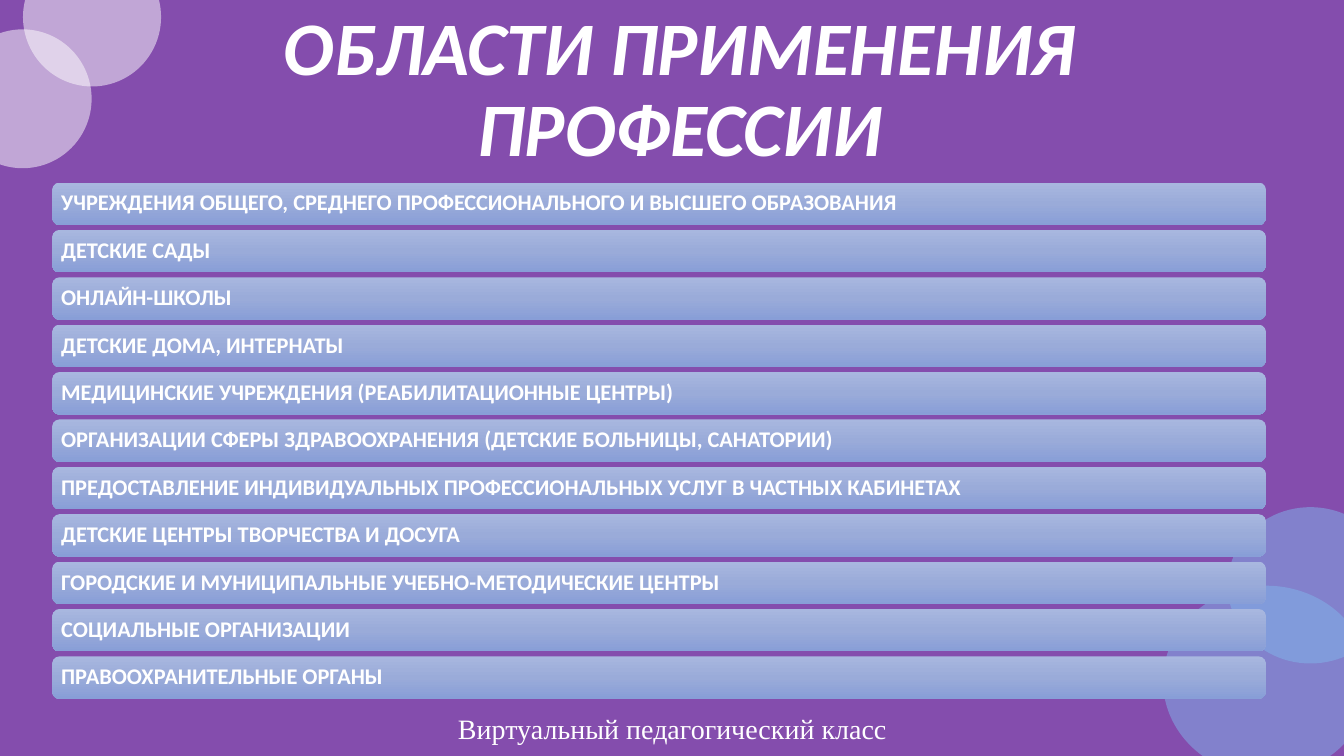
from copy import deepcopy
from dataclasses import dataclass

from lxml import etree
from pptx import Presentation
from pptx import util as u
from pptx.dml.color import RGBColor
from pptx.enum import shapes, text
from pptx.oxml import ns

WHITE = "FFFFFF"
SKY = "81B6EB"
BACKDROP = "844DAD"
BAR_GRADIENT = ((0, "A8B7DF"), (0.5, "9AABD9"), (1, "889ED7"))

BAR_LEFT, BAR_WIDTH, BAR_HEIGHT = 1.32, 30.58, 1.07
FIRST_TOP, LAST_TOP = 4.6, 16.54

FIELDS = (
    "УЧРЕЖДЕНИЯ ОБЩЕГО, СРЕДНЕГО ПРОФЕССИОНАЛЬНОГО И ВЫСШЕГО ОБРАЗОВАНИЯ",
    "ДЕТСКИЕ САДЫ",
    "ОНЛАЙН-ШКОЛЫ",
    "ДЕТСКИЕ ДОМА, ИНТЕРНАТЫ",
    "МЕДИЦИНСКИЕ УЧРЕЖДЕНИЯ (РЕАБИЛИТАЦИОННЫЕ ЦЕНТРЫ)",
    "ОРГАНИЗАЦИИ СФЕРЫ ЗДРАВООХРАНЕНИЯ (ДЕТСКИЕ БОЛЬНИЦЫ, САНАТОРИИ)",
    "ПРЕДОСТАВЛЕНИЕ ИНДИВИДУАЛЬНЫХ ПРОФЕССИОНАЛЬНЫХ УСЛУГ В ЧАСТНЫХ КАБИНЕТАХ",
    "ДЕТСКИЕ ЦЕНТРЫ ТВОРЧЕСТВА И ДОСУГА",
    "ГОРОДСКИЕ И МУНИЦИПАЛЬНЫЕ УЧЕБНО-МЕТОДИЧЕСКИЕ ЦЕНТРЫ",
    "СОЦИАЛЬНЫЕ ОРГАНИЗАЦИИ",
    "ПРАВООХРАНИТЕЛЬНЫЕ ОРГАНЫ",
)


@dataclass(frozen=True)
class Bubble:
    left: float
    top: float
    width: float
    height: float
    color: str


@dataclass(frozen=True)
class Bar:
    top: float
    label: str


BUBBLES = (
    Bubble(29.31, 14.76, 5.21, 4.8, SKY),
    Bubble(-1.17, 0.74, 3.48, 3.5, WHITE),
    Bubble(0.58, -1.32, 3.48, 3.5, WHITE),
    Bubble(30.94, 12.78, 4.17, 3.94, SKY),
)
PITCH = (LAST_TOP - FIRST_TOP) / (len(FIELDS) - 1)
BARS = [Bar(FIRST_TOP + i * PITCH, label) for i, label in enumerate(FIELDS)]


def paint(color_format, color: str) -> None:
    color_format.rgb = RGBColor.from_string(color)


def write(frame, words: str, font: str, size: float, align,
          bold: bool = False, italic: bool = False) -> None:
    frame.word_wrap = True
    frame.auto_size = text.MSO_AUTO_SIZE.NONE
    frame.vertical_anchor = text.MSO_ANCHOR.MIDDLE
    frame.text = words
    paragraph = frame.paragraphs[0]
    paragraph.alignment = align
    paragraph.font.name = font
    paragraph.font.size = u.Pt(size)
    paragraph.font.bold = bold
    paragraph.font.italic = italic
    paint(paragraph.font.color, WHITE)


def draw_title(slide) -> None:
    title = slide.shapes.title
    title.left, title.top = u.Cm(2.34), u.Cm(1.02)
    title.width, title.height = u.Cm(29.57), u.Cm(4.62)
    write(title.text_frame, "ОБЛАСТИ ПРИМЕНЕНИЯ ПРОФЕССИИ", "Calibri", 54,
          text.PP_ALIGN.CENTER, bold=True, italic=True)
    title.text_frame.margin_bottom = u.Cm(2.18)
    title.text_frame.paragraphs[0].line_spacing = 0.9


def draw_bubble(slide, bubble: Bubble) -> None:
    circle = slide.shapes.add_shape(
        shapes.MSO_SHAPE.OVAL, u.Cm(bubble.left), u.Cm(bubble.top),
        u.Cm(bubble.width), u.Cm(bubble.height))
    circle.shadow.inherit = False
    circle.line.fill.background()
    circle.fill.solid()
    paint(circle.fill.fore_color, bubble.color)
    tint = next(circle._element.spPr.iter(ns.qn("a:srgbClr")))
    etree.SubElement(tint, ns.qn("a:alpha"), val="50000")


def draw_bar(slide, bar: Bar) -> None:
    strip = slide.shapes.add_shape(
        shapes.MSO_SHAPE.ROUNDED_RECTANGLE, u.Cm(BAR_LEFT), u.Cm(bar.top),
        u.Cm(BAR_WIDTH), u.Cm(BAR_HEIGHT))
    strip.shadow.inherit = False
    strip.line.fill.background()
    strip.fill.gradient()
    strip.fill.gradient_angle = 270
    first_stop = next(strip._element.spPr.iter(ns.qn("a:gs")))
    first_stop.addnext(deepcopy(first_stop))
    for stop, (position, color) in zip(strip.fill.gradient_stops, BAR_GRADIENT):
        stop.position = position
        paint(stop.color, color)
    frame = strip.text_frame
    write(frame, bar.label, "Calibri", 16, text.PP_ALIGN.LEFT, bold=True)
    frame.paragraphs[0].line_spacing = 0.9
    frame.margin_left = frame.margin_right = u.Cm(0.17)
    frame.margin_top = frame.margin_bottom = u.Cm(0.17)


def draw_footer(slide) -> None:
    footer = slide.shapes.add_textbox(
        u.Cm(10.39), u.Cm(17.96), u.Cm(13.11), u.Cm(0.79))
    write(footer.text_frame, "Виртуальный педагогический класс",
          "Times New Roman", 20, text.PP_ALIGN.CENTER)


def main() -> None:
    deck = Presentation()
    deck.slide_width, deck.slide_height = u.Cm(33.87), u.Cm(19.05)
    slide = deck.slides.add_slide(deck.slide_layouts[5])
    slide.background.fill.solid()
    paint(slide.background.fill.fore_color, BACKDROP)
    draw_title(slide)
    for bubble in BUBBLES:
        draw_bubble(slide, bubble)
    draw_footer(slide)
    for bar in BARS:
        draw_bar(slide, bar)
    deck.save("out.pptx")


if __name__ == "__main__":
    main()
